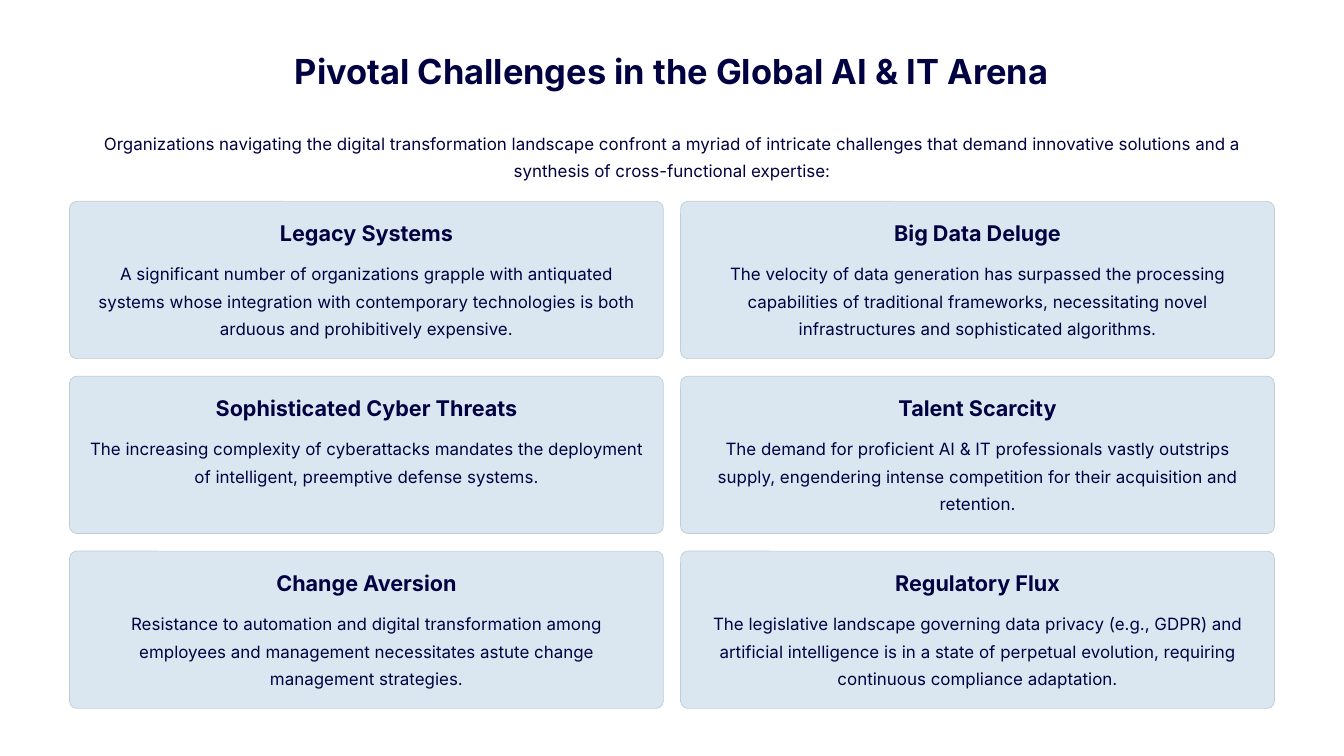
"""Builds a slide with six challenge cards in a two-column grid."""
from pptx import Presentation
from pptx.dml.color import RGBColor
from pptx.enum.shapes import MSO_SHAPE
from pptx.enum.text import MSO_ANCHOR, MSO_AUTO_SIZE, PP_ALIGN
from pptx.util import Pt

ROUNDED = MSO_SHAPE.ROUNDED_RECTANGLE
CENTER = PP_ALIGN.CENTER
TOP = MSO_ANCHOR.TOP
NO_AUTOFIT = MSO_AUTO_SIZE.NONE

COLORS = {"text": "010141", "card": "DBE7F0", "border": "C1CDD6", "page": "FFFFFF"}
FONT = "Inter"

CARD_LEFT, CARD_TOP = 59.6, 172.6
CARD_WIDTH, CARD_HEIGHT = 509, 134.8
COLUMN_STEP, ROW_STEP = 523.8, 149.9
PADDING = 15.4
COLUMNS = 2

CHALLENGES = [
    ("Legacy Systems",
     "A significant number of organizations grapple with antiquated systems whose "
     "integration with contemporary technologies is both arduous and prohibitively expensive."),
    ("Big Data Deluge",
     "The velocity of data generation has surpassed the processing capabilities of traditional "
     "frameworks, necessitating novel infrastructures and sophisticated algorithms."),
    ("Sophisticated Cyber Threats",
     "The increasing complexity of cyberattacks mandates the deployment of intelligent, "
     "preemptive defense systems."),
    ("Talent Scarcity",
     "The demand for proficient AI & IT professionals vastly outstrips supply, engendering "
     "intense competition for their acquisition and retention."),
    ("Change Aversion",
     "Resistance to automation and digital transformation among employees and management "
     "necessitates astute change management strategies."),
    ("Regulatory Flux",
     "The legislative landscape governing data privacy (e.g., GDPR) and artificial intelligence "
     "is in a state of perpetual evolution, requiring continuous compliance adaptation."),
]


def write_text(box, text, size, spacing, bold=False):
    frame = box.text_frame
    frame.text = text
    frame.word_wrap = True
    frame.auto_size = NO_AUTOFIT
    frame.vertical_anchor = TOP
    frame.margin_left = frame.margin_right = frame.margin_top = frame.margin_bottom = 0
    para = frame.paragraphs[0]
    para.alignment = CENTER
    para.line_spacing = Pt(spacing)
    para.space_before = Pt(0)
    font = para.runs[0].font
    font.name = FONT
    font.size = Pt(size)
    font.bold = bold
    font.color.rgb = RGBColor.from_string(COLORS["text"])


def add_text(left, top, width, height, text, size, spacing, bold=False):
    box = page.shapes.add_textbox(Pt(left), Pt(top), Pt(width), Pt(height))
    write_text(box, text, size, spacing, bold)


deck = Presentation()
deck.slide_width, deck.slide_height = Pt(1152), Pt(648)
page = deck.slides.add_slide(deck.slide_layouts[5])
page.background.fill.solid()
page.background.fill.fore_color.rgb = RGBColor.from_string(COLORS["page"])

title = page.shapes.title
title.left, title.top, title.width, title.height = Pt(249), Pt(41), Pt(654), Pt(37.4)
write_text(title, "Pivotal Challenges in the Global AI & IT Arena", 29.5, 37, bold=True)

add_text(CARD_LEFT, 108, 1032.8, 47.5,
         "Organizations navigating the digital transformation landscape confront a myriad of "
         "intricate challenges that demand innovative solutions and a synthesis of "
         "cross-functional expertise:", 14.5, 23.5)

for index, (heading, detail) in enumerate(CHALLENGES):
    row, column = divmod(index, COLUMNS)
    left = CARD_LEFT + column * COLUMN_STEP
    top = CARD_TOP + row * ROW_STEP
    card = page.shapes.add_shape(ROUNDED, Pt(left), Pt(top), Pt(CARD_WIDTH), Pt(CARD_HEIGHT))
    card.adjustments[0] = 0.046
    card.shadow.inherit = False
    card.fill.solid()
    card.fill.fore_color.rgb = RGBColor.from_string(COLORS["card"])
    card.line.color.rgb = RGBColor.from_string(COLORS["border"])
    card.line.width = Pt(0.6)

    text_left, text_width = left + PADDING, CARD_WIDTH - 2 * PADDING
    add_text(text_left, top + PADDING, text_width, 23, heading, 18.5, 23, bold=True)
    add_text(text_left, top + 47.6, text_width, 71.3, detail, 14.5, 23.5)

deck.save("out.pptx")
